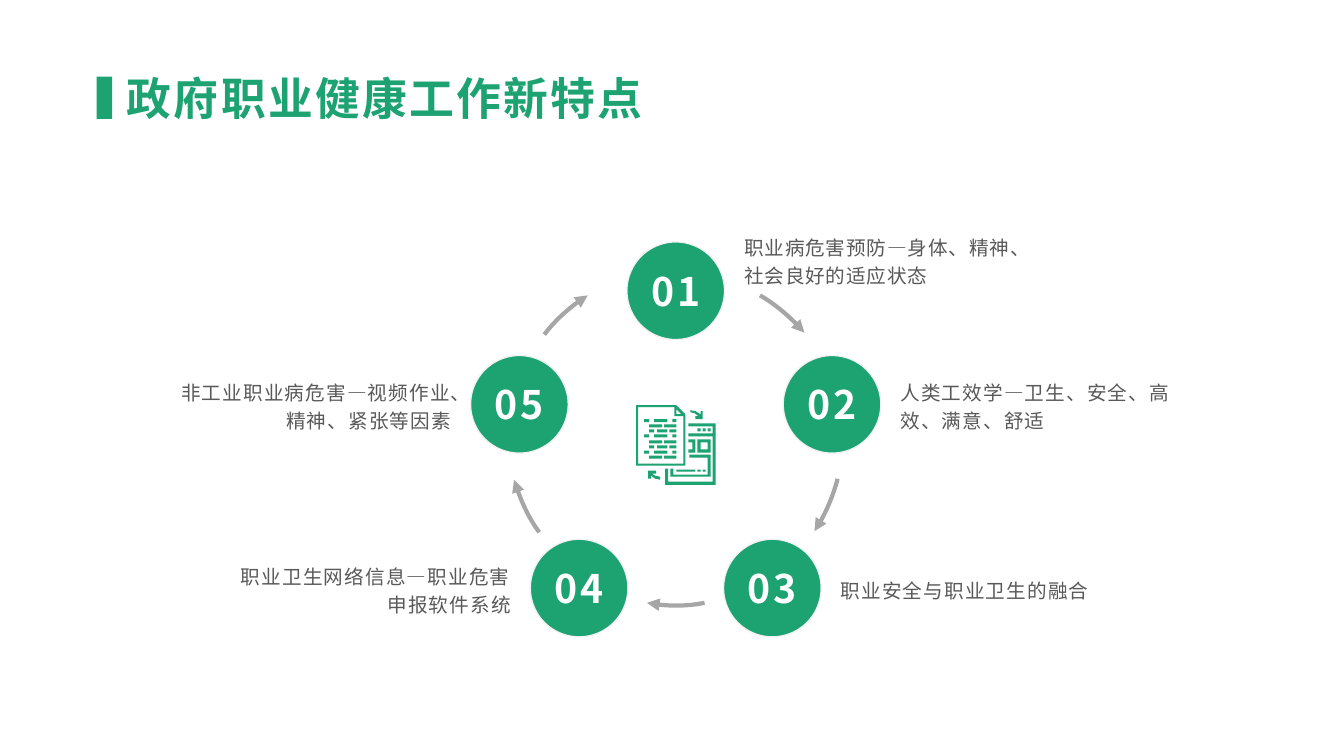
from math import cos, radians, sin

from lxml import etree
from pptx import Presentation
from pptx.dml.color import RGBColor
from pptx.enum.shapes import MSO_SHAPE
from pptx.enum.text import MSO_ANCHOR, MSO_AUTO_SIZE, PP_ALIGN
from pptx.oxml.ns import qn
from pptx.util import Pt

OVAL, RECT = MSO_SHAPE.OVAL, MSO_SHAPE.RECTANGLE
TOP, MIDDLE = MSO_ANCHOR.TOP, MSO_ANCHOR.MIDDLE
LEFT, CENTER, RIGHT = PP_ALIGN.LEFT, PP_ALIGN.CENTER, PP_ALIGN.RIGHT
FONT = "Noto Sans CJK SC"
GREEN, GRAY, TEXT, RIM, WHITE = "1DA272", "A6A6A6", "595959", "F2F2F2", "FFFFFF"

TITLE = "政府职业健康工作新特点"
# Clockwise from the top: text, side, box width, upward shift, letter spacing
ITEMS = [
    ("职业病危害预防—身体、精神、社会良好的适应状态", LEFT, 214.6, 22.3, 0.6),
    ("人类工效学—卫生、安全、高效、满意、舒适", LEFT, 211.7, 0, 0.8),
    ("职业安全与职业卫生的融合", LEFT, 211.7, 0, 0.8),
    ("职业卫生网络信息—职业危害申报软件系统", RIGHT, 216.7, 0, 0.8),
    ("非工业职业病危害—视频作业、精神、紧张等因素", RIGHT, 216.7, 0, 0.8),
]
# Bezier points of each arrow, in points
ARROWS = [
    [(542.9, 211), (558, 219.6), (570.2, 232.6), (574.6, 237.6)],
    [(598.3, 342), (594, 359.3), (585.4, 374.4), (581.8, 379.4)],
    [(503.3, 430.6), (486, 434.2), (468.7, 432), (462.2, 430.6)],
    [(388.8, 239), (399.6, 224.6), (414, 214.6), (419.8, 211)],
    [(385.2, 380.2), (374.4, 365.8), (369.4, 349.2), (367.2, 342.7)],
]
RING_X, RING_Y, RING_R = 482.7, 325.1, 117.4
DISC, GAP, BOX_H = 69.8, 6.8, 54

# Icon outlines on a grid of 0.72 pt
ICON_X, ICON_Y, GRID = 454.3, 289.4, 0.72
ICON = [
    [(0, 0), (40, 0), (49, 9), (49, 60), (0, 60)],
    [(2, 2), (2, 58), (47, 58), (47, 11), (38, 11), (38, 2)],
    [(40, 4), (40, 9), (45, 9)],
    [(52, 18), (79, 18), (79, 79), (29, 79), (29, 63), (32, 63), (32, 76),
     (76, 76), (76, 31), (52, 31), (52, 28), (76, 28), (76, 21), (52, 21)],
    [(53, 49), (74, 49), (74, 71), (34, 71), (34, 63), (37, 63), (37, 69),
     (71, 69), (71, 52), (53, 52)],
    [(52, 34), (59, 34), (59, 47), (52, 47), (52, 44), (56, 44), (56, 37), (52, 37)],
    [(12, 65), (20, 65), (20, 68), (16, 68), (19, 70), (24, 71), (24, 74),
     (19, 73), (15, 70), (15, 73), (12, 73)],
    [(54, 5), (59, 6), (64, 9), (64, 6), (66, 6), (66, 14), (59, 14), (59, 11),
     (62, 11), (58, 8), (54, 7)],
]
# Icon boxes: left, top, right, bottom
BOXES = [(61, 34, 74, 47), (64, 37, 71, 44), (40, 64, 59, 66), (61, 64, 64, 66),
         (66, 64, 69, 66), (61, 23, 64, 26), (66, 23, 69, 26), (71, 23, 74, 26)]
# Text dashes of the icon page; three line patterns in turn
DASHES = [[(8, 13), (18, 31), (36, 40)], [(13, 26), (28, 40)],
          [(13, 18), (21, 31), (33, 40)]]
ROWS, ROW_TOP, ROW_STEP, DASH_H = 8, 14, 5.15, 3


def color(hex_str):
    return RGBColor.from_string(hex_str)


def style(shape, fill=None, line=None, width=1):
    shape.shadow.inherit = False
    if fill:
        shape.fill.solid()
        shape.fill.fore_color.rgb = color(fill)
    else:
        shape.fill.background()
    if line:
        shape.line.color.rgb = color(line)
        shape.line.width = Pt(width)
    else:
        shape.line.fill.background()


def put(shape, text, size=14, ink=TEXT, bold=False, gap=0.8, align=LEFT,
        anchor=MIDDLE, inset=(7.2, 3.6), wrap=True, lead=1, after=8):
    """Write one paragraph into the shape; gap is the letter spacing."""
    frame = shape.text_frame
    frame.auto_size = MSO_AUTO_SIZE.NONE
    frame.word_wrap = wrap
    frame.vertical_anchor = anchor
    frame.margin_left = frame.margin_right = Pt(inset[0])
    frame.margin_top = frame.margin_bottom = Pt(inset[1])
    para = frame.paragraphs[0]
    para.alignment = align
    para.line_spacing = lead
    para.space_before, para.space_after = Pt(0), Pt(after)
    run = para.add_run()
    run.text = text
    font = run.font
    font.name, font.size, font.bold = FONT, Pt(size), bold
    font.color.rgb = color(ink)
    props = run._r.get_or_add_rPr()
    props.set("spc", str(round(gap * 100)))
    etree.SubElement(props, qn("a:ea")).set("typeface", FONT)


def trace(slide, paths, unit, x=0, y=0, close=True):
    """Draw paths of whole units as one freeform with its origin at x, y."""
    pen = slide.shapes.build_freeform(*paths[0][0], scale=Pt(unit))
    for num, path in enumerate(paths):
        if num:
            pen.move_to(*path[0])
        pen.add_line_segments(path[1:], close=close)
    return pen.convert_to_shape(Pt(x), Pt(y))


def curve(pts, steps=12):
    """Sample a cubic Bezier curve in hundredths of a point."""
    out = []
    for num in range(steps + 1):
        t = num / steps
        mix = ((1 - t) ** 3, 3 * t * (1 - t) ** 2, 3 * t * t * (1 - t), t ** 3)
        out.append(tuple(round(100 * sum(m * p[axis] for m, p in zip(mix, pts)))
                         for axis in (0, 1)))
    return out


def draw_icon(slide):
    boxes = list(BOXES)
    for row in range(ROWS):
        top = round(ROW_TOP + row * ROW_STEP)
        boxes += [(a, top, b, top + DASH_H) for a, b in DASHES[row % len(DASHES)]]
    paths = ICON + [[(a, t), (b, t), (b, d), (a, d)] for a, t, b, d in boxes]
    style(trace(slide, paths, GRID, ICON_X, ICON_Y), fill=GREEN)


def draw_item(slide, num, item):
    text, side, width, lift, gap = item
    angle = radians(72 * num)
    x, y = RING_X + RING_R * sin(angle), RING_Y - RING_R * cos(angle)
    half = DISC / 2
    disc = slide.shapes.add_shape(OVAL, Pt(x - half), Pt(y - half), Pt(DISC), Pt(DISC))
    style(disc, GREEN, RIM)
    put(disc, f"{num + 1:02}", size=28, ink=WHITE, bold=True, gap=2,
        align=CENTER, inset=(5, 5), wrap=False)
    left = x + half + GAP if side == LEFT else x - half - GAP - width
    box = slide.shapes.add_textbox(Pt(left), Pt(y - lift - BOX_H / 2), Pt(width), Pt(BOX_H))
    put(box, text, gap=gap, align=side, lead=1.2)


def draw_arrow(slide, pts):
    arrow = trace(slide, [curve(pts)], 0.01, close=False)
    style(arrow, line=GRAY, width=3)
    etree.SubElement(arrow.line._get_or_add_ln(), qn("a:tailEnd")).set("type", "triangle")


def main():
    deck = Presentation()
    deck.slide_width, deck.slide_height = Pt(960), Pt(540)
    slide = deck.slides.add_slide(deck.slide_layouts[5])
    title = slide.shapes.title
    title.left, title.top, title.width, title.height = Pt(85.7), Pt(48.2), Pt(769), Pt(48.2)
    put(title, TITLE, size=32, ink=GREEN, bold=True, gap=1.6, anchor=TOP,
        inset=(5, 2.2), after=0)
    draw_icon(slide)
    for num, item in enumerate(ITEMS):
        draw_item(slide, num, item)
    for pts in ARROWS:
        draw_arrow(slide, pts)
    mark = slide.shapes.add_shape(RECT, Pt(69.1), Pt(54.7), Pt(11), Pt(30.2))
    style(mark, GREEN)
    deck.save("out.pptx")


if __name__ == "__main__":
    main()
